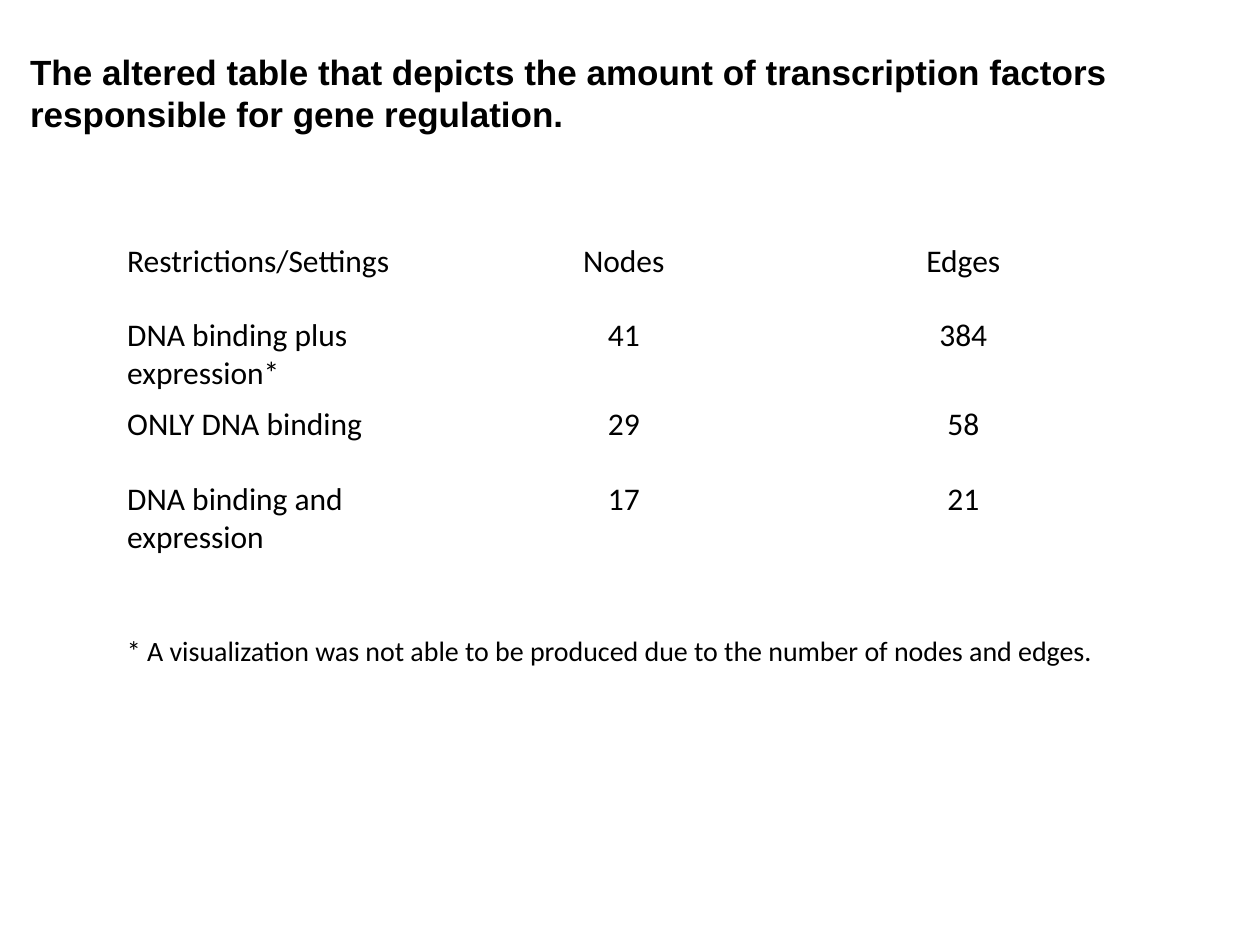
from dataclasses import dataclass

from pptx import Presentation
from pptx.dml.color import RGBColor
from pptx.enum.text import MSO_ANCHOR, MSO_AUTO_SIZE, PP_ALIGN
from pptx.util import Pt


@dataclass(frozen=True)
class Theme:
    ink: RGBColor = RGBColor(0, 0, 0)
    heading_font: str = "Arial"
    body_font: str = "Calibri"
    title_size: int = 20
    table_size: int = 18
    note_size: int = 16


class SlideBuilder:
    def __init__(self, slide, theme):
        self.slide = slide
        self.theme = theme

    def set_text(self, frame, text, font, size, bold=False, align=PP_ALIGN.LEFT):
        frame.text = text
        frame.word_wrap = True
        paragraph = frame.paragraphs[0]
        paragraph.alignment = align
        paragraph.font.name = font
        paragraph.font.size = Pt(size)
        paragraph.font.bold = bold
        paragraph.font.color.rgb = self.theme.ink

    def title(self, text, left, top, width, height):
        heading = self.slide.shapes.title
        heading.left, heading.top = Pt(left), Pt(top)
        heading.width, heading.height = Pt(width), Pt(height)
        frame = heading.text_frame
        self.set_text(frame, text, self.theme.heading_font, self.theme.title_size, bold=True)
        frame.auto_size = MSO_AUTO_SIZE.NONE
        frame.vertical_anchor = MSO_ANCHOR.TOP

    def table(self, rows, left, top, width, row_height):
        """Add an unfilled table with the first column left-aligned and the rest centred."""
        table = self.slide.shapes.add_table(
            len(rows), len(rows[0]), Pt(left), Pt(top), Pt(width), Pt(row_height * len(rows))
        ).table
        table.first_row = False
        table.horz_banding = False
        for r, values in enumerate(rows):
            for c, value in enumerate(values):
                cell = table.cell(r, c)
                cell.fill.background()
                align = PP_ALIGN.CENTER if c else PP_ALIGN.LEFT
                self.set_text(cell.text_frame, value, self.theme.body_font,
                              self.theme.table_size, align=align)

    def note(self, text, left, top, width, height):
        box = self.slide.shapes.add_textbox(Pt(left), Pt(top), Pt(width), Pt(height))
        self.set_text(box.text_frame, text, self.theme.body_font, self.theme.note_size)
        box.text_frame.auto_size = MSO_AUTO_SIZE.SHAPE_TO_FIT_TEXT


REGULATION_ROWS = [
    ("Restrictions/Settings", "Nodes", "Edges"),
    ("DNA binding plus expression*", "41", "384"),
    ("ONLY DNA binding", "29", "58"),
    ("DNA binding and expression", "17", "21"),
]


def main():
    presentation = Presentation()
    presentation.slide_width, presentation.slide_height = Pt(720), Pt(540)
    title_only = presentation.slide_layouts.get_by_name("Title Only")
    builder = SlideBuilder(presentation.slides.add_slide(title_only), Theme())

    content_left, content_width = 65.5, 582
    builder.title(
        "The altered table that depicts the amount of transcription factors "
        "responsible for gene regulation.",
        10, 25.2, 710, 55.7,
    )
    builder.table(REGULATION_ROWS, content_left, 134.7, content_width, 42.5)
    builder.note(
        "* A visualization was not able to be produced due to the number of nodes and edges.",
        content_left, 358.6, content_width, 26.6,
    )
    presentation.save("out.pptx")


if __name__ == "__main__":
    main()
